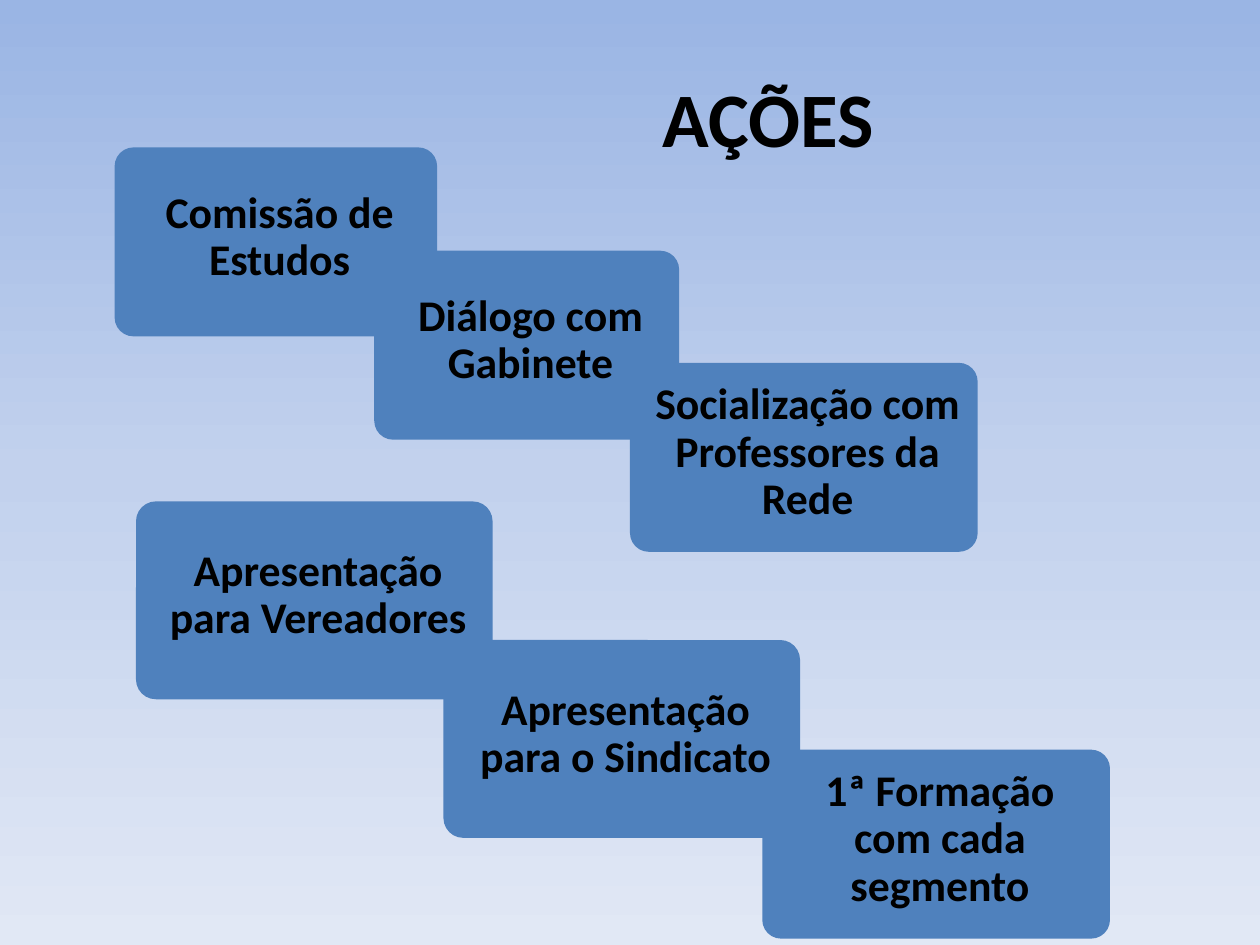
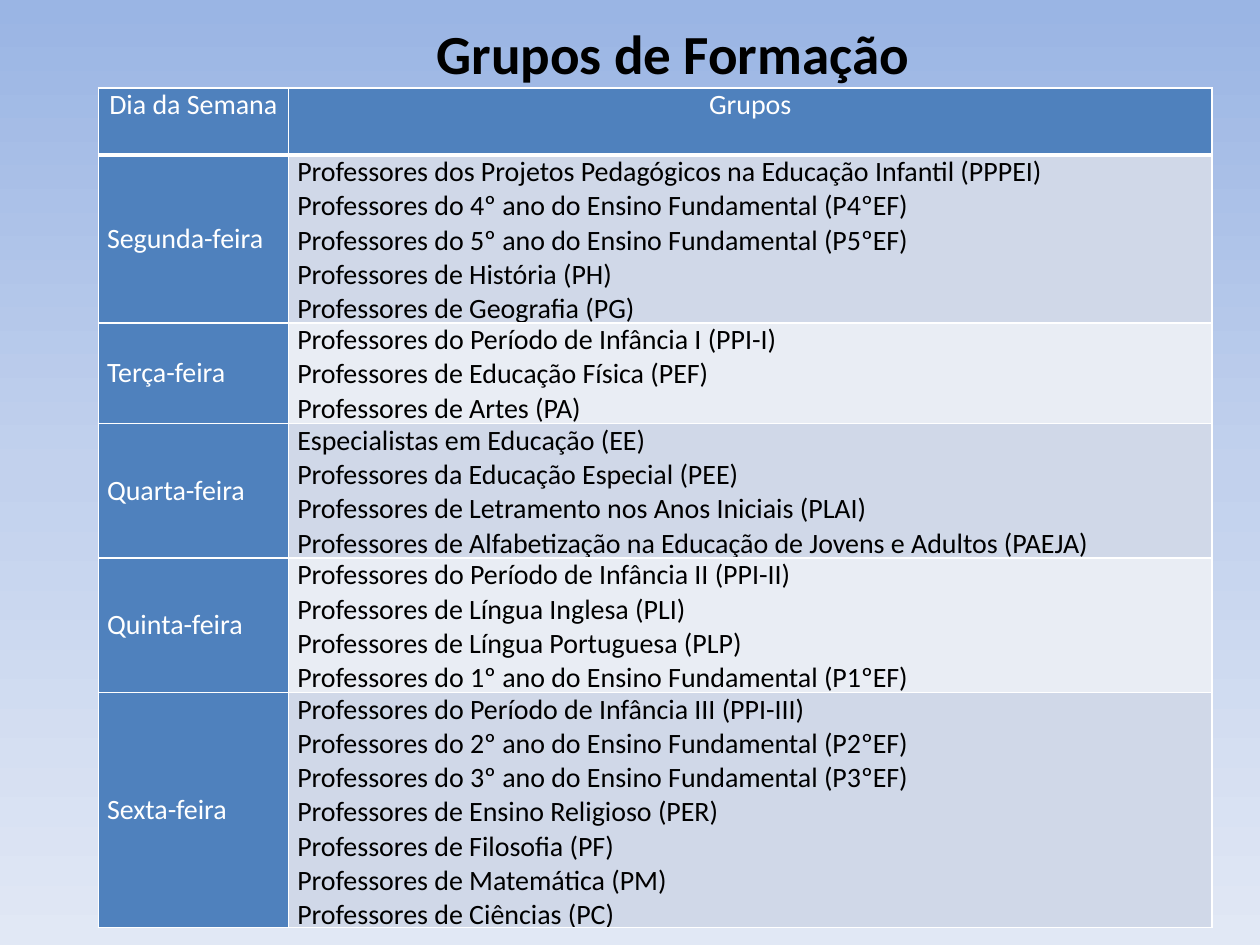
import copy

import pptx
import pptx.dml.color
import pptx.enum.shapes
import pptx.enum.text
import pptx.oxml
import pptx.oxml.ns
import pptx.util

Inches, Pt = pptx.util.Inches, pptx.util.Pt
ALIGN = pptx.enum.text.PP_ALIGN
ANCHOR = pptx.enum.text.MSO_ANCHOR

FONT = "Calibri"
BLACK, WHITE, BLUE = "000000", "FFFFFF", "4F81BD"
ROW_BANDS = ("D0D8E8", "E9EDF4")
BACKGROUND = ((0, "9AB5E4"), (0.5, "C2D1ED"), (1, "E1E8F5"))

# Left, top, width, height, text; later steps lie over earlier ones
STEPS = [
    (0.91, 1.17, 2.56, 1.5, "Comissão de Estudos"),
    (6.05, 5.95, 2.76, 1.5, "1ª Formação com cada segmento"),
    (2.97, 1.99, 2.42, 1.5, "Diálogo com Gabinete"),
    (1.08, 3.98, 2.83, 1.57, "Apresentação para Vereadores"),
    (3.52, 5.08, 2.83, 1.57, "Apresentação para o Sindicato"),
    (5.0, 2.88, 2.76, 1.5, "Socialização com Professores da Rede"),
]

HEADERS = ("Dia da Semana", "Grupos")
WEEK = {
    "Segunda-feira": [
        "Professores dos Projetos Pedagógicos na Educação Infantil (PPPEI)",
        "Professores do 4º ano do Ensino Fundamental (P4ºEF)",
        "Professores do 5º ano do Ensino Fundamental (P5ºEF)",
        "Professores de História (PH)",
        "Professores de Geografia (PG)",
    ],
    "Terça-feira": [
        "Professores do Período de Infância I (PPI-I)",
        "Professores de Educação Física (PEF)",
        "Professores de Artes (PA)",
    ],
    "Quarta-feira": [
        "Especialistas em Educação (EE)",
        "Professores da Educação Especial (PEE)",
        "Professores de Letramento nos Anos Iniciais (PLAI)",
        "Professores de Alfabetização na Educação de Jovens e Adultos (PAEJA)",
    ],
    "Quinta-feira": [
        "Professores do Período de Infância II (PPI-II)",
        "Professores de Língua Inglesa (PLI)",
        "Professores de Língua Portuguesa (PLP)",
        "Professores do 1º ano do Ensino Fundamental (P1ºEF)",
    ],
    "Sexta-feira": [
        "Professores do Período de Infância III (PPI-III)",
        "Professores do 2º ano do Ensino Fundamental (P2ºEF)",
        "Professores do 3º ano do Ensino Fundamental (P3ºEF)",
        "Professores de Ensino Religioso (PER)",
        "Professores de Filosofia (PF)",
        "Professores de Matemática (PM)",
        "Professores de Ciências (PC)",
    ],
}


def rgb(color):
    return pptx.dml.color.RGBColor.from_string(color)


def set_margins(target, left, top, right, bottom):
    target.margin_left, target.margin_top = Inches(left), Inches(top)
    target.margin_right, target.margin_bottom = Inches(right), Inches(bottom)


def write(tf, lines, size, color, align=ALIGN.LEFT, bold=False, spacing=None):
    """Fill a text frame with one paragraph per line."""
    tf.word_wrap = True
    for i, line in enumerate(lines):
        p = tf.add_paragraph() if i else tf.paragraphs[0]
        p.text = line
        p.alignment = align
        p.line_spacing = spacing
        p.font.name, p.font.size, p.font.bold = FONT, Pt(size), bold
        p.font.color.rgb = rgb(color)


def add_slide(prs):
    """Blank slide with the shared vertical gradient."""
    slide = prs.slides.add_slide(prs.slide_layouts[6])
    fill = slide.background.fill
    fill.gradient()
    fill.gradient_angle = 270
    first = slide.element.find(".//" + pptx.oxml.ns.qn("a:gs"))
    first.addnext(copy.deepcopy(first))
    for stop, (position, color) in zip(fill.gradient_stops, BACKGROUND):
        stop.position = position
        stop.color.rgb = rgb(color)
    return slide


def add_title(slide, box, text, size, left_margin):
    """Centred title, pushed right by its left margin."""
    tf = slide.shapes.add_textbox(*map(Inches, box)).text_frame
    set_margins(tf, left_margin, 0.05, 0.1, 0.05)
    tf.vertical_anchor = ANCHOR.MIDDLE
    write(tf, [text], size, BLACK, ALIGN.CENTER, bold=True)


def add_step(slide, box, text):
    sp = slide.shapes.add_shape(
        pptx.enum.shapes.MSO_SHAPE.ROUNDED_RECTANGLE, *map(Inches, box))
    sp.adjustments[0] = 0.1
    sp.shadow.inherit = False
    sp.fill.solid()
    sp.fill.fore_color.rgb = rgb(BLUE)
    sp.line.fill.background()
    tf = sp.text_frame
    set_margins(tf, 0.13, 0.07, 0.07, 0.14)
    tf.vertical_anchor = ANCHOR.MIDDLE
    write(tf, [text], 25, BLACK, ALIGN.CENTER, bold=True, spacing=0.9)


def set_borders(cell, bottom):
    """White 1 pt borders, with the bottom width given in points."""
    tc_pr = cell._tc.get_or_add_tcPr()
    sides = (("lnL", 1), ("lnR", 1), ("lnT", 1), ("lnB", bottom))
    for i, (side, width) in enumerate(sides):
        tc_pr.insert(i, pptx.oxml.parse_xml(
            f'<a:{side} {pptx.oxml.ns.nsdecls("a")} w="{Pt(width)}"><a:solidFill>'
            f'<a:srgbClr val="{WHITE}"/></a:solidFill></a:{side}>'))


def fill_cell(cell, lines, fill, color, align=ALIGN.LEFT,
              anchor=ANCHOR.TOP, bottom=1):
    set_margins(cell, 0.07, 0, 0.07, 0)
    cell.vertical_anchor = anchor
    cell.fill.solid()
    cell.fill.fore_color.rgb = rgb(fill)
    set_borders(cell, bottom)
    write(cell.text_frame, lines, 16, color, align)


def add_week_table(slide, left, top, widths, header_height, line_height):
    """Days in the first column; row heights follow the number of groups."""
    heights = [header_height] + [line_height * len(g) for g in WEEK.values()]
    table = slide.shapes.add_table(
        len(heights), len(widths), Inches(left), Inches(top),
        Inches(sum(widths)), Inches(sum(heights))).table
    for column, width in zip(table.columns, widths):
        column.width = Inches(width)
    for row, height in zip(table.rows, heights):
        row.height = Inches(height)

    for col, header in enumerate(HEADERS):
        fill_cell(table.cell(0, col), [header], BLUE, WHITE, ALIGN.CENTER, bottom=3)
    for row, (day, groups) in enumerate(WEEK.items(), 1):
        fill_cell(table.cell(row, 0), [day], BLUE, WHITE, anchor=ANCHOR.MIDDLE)
        fill_cell(table.cell(row, 1), groups, ROW_BANDS[(row - 1) % 2], BLACK)


def build_actions(prs):
    slide = add_slide(prs)
    add_title(slide, (0.5, 0.3, 9, 1.25), "AÇÕES", 44, 2.3)
    for *box, text in STEPS:
        add_step(slide, box, text)


def build_groups(prs):
    slide = add_slide(prs)
    add_week_table(slide, 0.78, 0.7, (1.51, 7.33), 0.53, 0.26)
    add_title(slide, (0.31, 0.08, 9.45, 0.67), "Grupos de Formação", 31.5, 0.71)


def main():
    prs = pptx.Presentation()
    prs.slide_width, prs.slide_height = Inches(10), Inches(7.5)
    build_actions(prs)
    build_groups(prs)
    prs.save("out.pptx")


if __name__ == "__main__":
    main()
